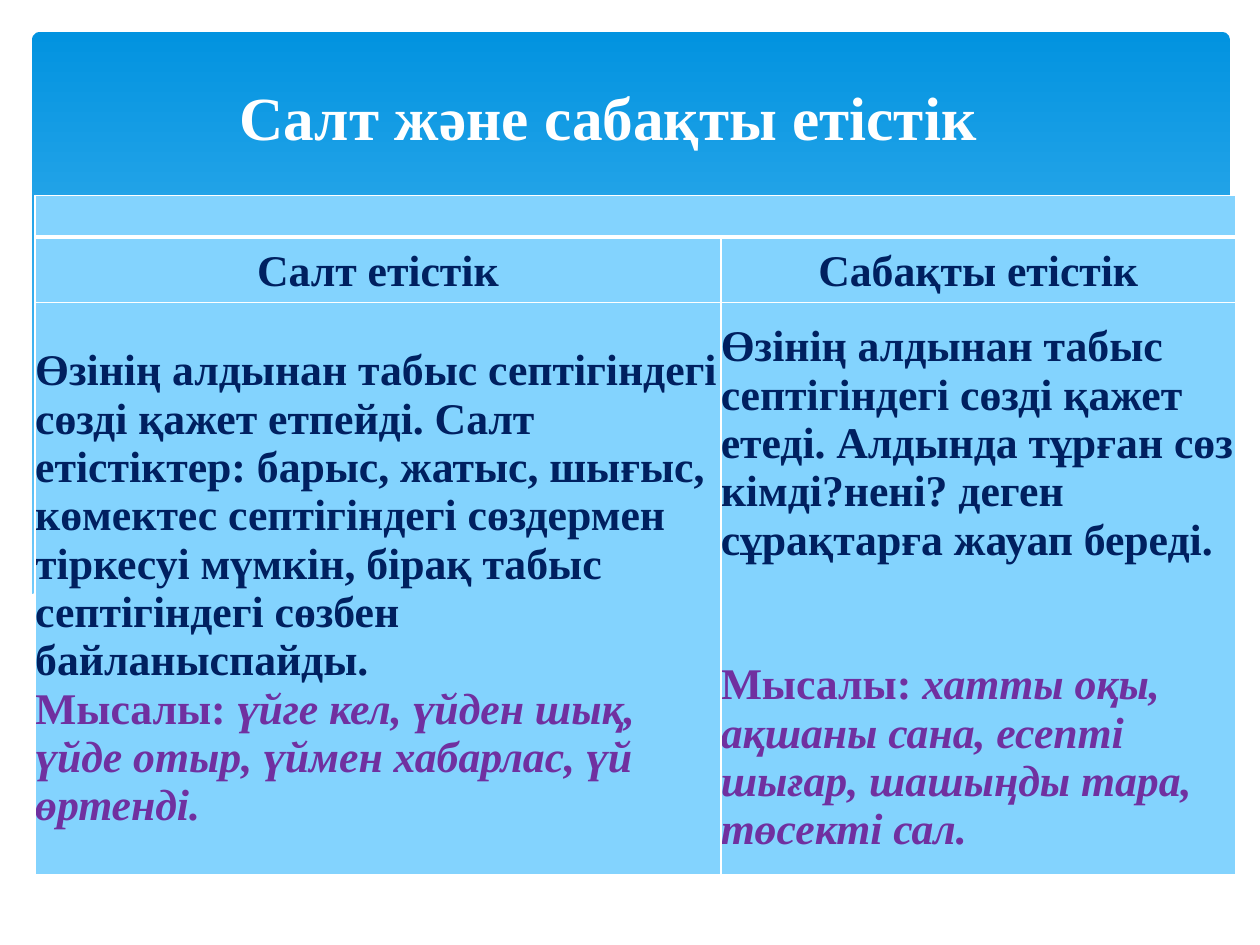
from dataclasses import dataclass

from lxml import etree
from pptx import Presentation
from pptx.dml.color import RGBColor
from pptx.enum.shapes import MSO_SHAPE
from pptx.enum.text import MSO_ANCHOR, PP_ALIGN
from pptx.oxml.ns import qn
from pptx.util import Cm, Pt

ROUNDED = MSO_SHAPE.ROUNDED_RECTANGLE
MIDDLE, BOTTOM = MSO_ANCHOR.MIDDLE, MSO_ANCHOR.BOTTOM
LEFT, CENTER = PP_ALIGN.LEFT, PP_ALIGN.CENTER


@dataclass(frozen=True)
class Theme:
    font: str = "Times New Roman"
    title_size: int = 35
    body_size: int = 25
    white: str = "FFFFFF"
    deep_blue: str = "0293E0"
    light_blue: str = "83D3FE"
    wave_blue: str = "C6E7FC"
    navy: str = "002060"
    purple: str = "7030A0"


THEME = Theme()

TITLE = "Салт және сабақты етістік "
HEADINGS = ("Салт етістік", "Сабақты етістік")
EXAMPLE_LABEL = "Мысалы: "
VERB_TYPES = (
    {
        "rule": "Өзінің алдынан табыс септігіндегі сөзді қажет етпейді. Салт етістіктер: "
                "барыс, жатыс, шығыс, көмектес септігіндегі сөздермен тіркесуі мүмкін, "
                "бірақ табыс септігіндегі сөзбен байланыспайды.",
        "example": "үйге кел, үйден шық, үйде отыр, үймен хабарлас, үй өртенді.",
        "gap": 0,
    },
    {
        "rule": "Өзінің алдынан табыс септігіндегі сөзді қажет етеді. Алдында тұрған сөз "
                "кімді?нені? деген сұрақтарға жауап береді.",
        "example": "хатты оқы, ақшаны сана, есепті шығар, шашыңды тара, төсекті сал.",
        "gap": 55,
    },
)
COLUMN_WIDTHS = (13.82, 10.38)
ROW_HEIGHTS = (0.84, 1.32, 11.53)

WAVES = (
    {"fill": THEME.wave_blue, "opacity": 29, "points": (
        (24.79, 11.68), (23.39, 11.94), (21.87, 12.27), (19.13, 12.9), (16.79, 13.34),
        (18.26, 13.54), (20.68, 13.67), (22.38, 13.54), (23.75, 13.26), (24.79, 12.88))},
    {"fill": THEME.wave_blue, "opacity": 40, "points": (
        (22.68, 13.54), (20.5, 13.21), (17.93, 12.7), (15.98, 12.24), (13.74, 11.76),
        (11.81, 11.46), (9.65, 11.33), (7.26, 11.48), (9.19, 11.76), (11.4, 12.24),
        (14.38, 12.93), (16.89, 13.36), (19, 13.61), (20.78, 13.69))},
    {"line": THEME.white, "points": (
        (7.85, 11.58), (8.97, 11.4), (11, 11.35), (12.95, 11.48), (15.44, 11.79),
        (17.65, 12.17), (20.19, 12.75), (23.04, 13.51))},
    {"line": THEME.white, "points": (
        (15.57, 13.13), (17.65, 12.6), (20.47, 11.94), (22.73, 11.53), (24.77, 11.33))},
    {"fill": THEME.white, "points": (
        (24.82, 12.85), (23.62, 13.26), (22.23, 13.54), (20.55, 13.64), (18.44, 13.51),
        (15.9, 13.18), (13.44, 12.67), (11.35, 12.19), (9.27, 11.73), (7.42, 11.46),
        (5.84, 11.3), (4.5, 11.28), (3.02, 11.38), (1.93, 11.56), (1.02, 11.81),
        (0.58, 12.01), (0.58, 14.96), (24.82, 14.96))},
)


def color(value):
    return RGBColor.from_string(value)


def add_run(paragraph, text, *, size=THEME.body_size, fill=THEME.navy, italic=False):
    run = paragraph.add_run()
    run.text = text
    run.font.name = THEME.font
    run.font.size = Pt(size)
    run.font.bold = True
    run.font.italic = italic
    run.font.color.rgb = color(fill)


def add_background(slide):
    panel = slide.shapes.add_shape(ROUNDED, Cm(0.64), Cm(0.64), Cm(24.16), Cm(13.16))
    panel.adjustments[0] = 0.013
    panel.shadow.inherit = False
    panel.line.fill.background()
    panel.fill.gradient()
    panel.fill.gradient_angle = 270
    stops = zip(panel.fill.gradient_stops, (THEME.deep_blue, THEME.light_blue), (0, 1))
    for stop, value, position in stops:
        stop.color.rgb = color(value)
        stop.position = position


def add_wave(slide, points, fill=None, line=None, opacity=100):
    start, *others = [(Cm(x), Cm(y)) for x, y in points]
    builder = slide.shapes.build_freeform(*start)
    builder.add_line_segments(others, close=fill is not None)
    shape = builder.convert_to_shape()
    shape.shadow.inherit = False
    if fill:
        shape.fill.solid()
        shape.fill.fore_color.rgb = color(fill)
        shape.line.fill.background()
        if opacity < 100:
            tint = next(shape._element.spPr.iter(qn("a:srgbClr")))
            etree.SubElement(tint, qn("a:alpha"), val=str(opacity * 1000))
    else:
        shape.fill.background()
        shape.line.color.rgb = color(line)
        shape.line.width = Pt(0)


def add_title(slide):
    box = slide.shapes.add_textbox(Cm(3.5), Cm(0.91), Cm(17.84), Cm(2.29))
    box.text_frame.word_wrap = True
    box.text_frame.vertical_anchor = BOTTOM
    paragraph = box.text_frame.paragraphs[0]
    paragraph.alignment = CENTER
    add_run(paragraph, TITLE, size=THEME.title_size, fill=THEME.white)


def style_cell(cell, top=1, bottom=1):
    cell.margin_left = cell.margin_right = cell.margin_top = cell.margin_bottom = 0
    cell.vertical_anchor = MIDDLE
    properties = cell._tc.get_or_add_tcPr()
    for side, width in (("L", 1), ("R", 1), ("T", top), ("B", bottom)):
        border = etree.SubElement(properties, qn(f"a:ln{side}"), w=str(Pt(width)))
        fill = etree.SubElement(border, qn("a:solidFill"))
        etree.SubElement(fill, qn("a:srgbClr"), val=THEME.white)
    cell.fill.solid()
    cell.fill.fore_color.rgb = color(THEME.light_blue)


def add_verb_table(slide):
    table = slide.shapes.add_table(
        len(ROW_HEIGHTS), len(COLUMN_WIDTHS), Cm(0.71), Cm(3.94),
        Cm(sum(COLUMN_WIDTHS)), Cm(sum(ROW_HEIGHTS))).table
    table.horz_banding = False
    for column, width in zip(table.columns, COLUMN_WIDTHS):
        column.width = Cm(width)
    for row, height in zip(table.rows, ROW_HEIGHTS):
        row.height = Cm(height)
    table.cell(0, 0).merge(table.cell(0, 1))
    for index, (heading, verb) in enumerate(zip(HEADINGS, VERB_TYPES)):
        band, header, body = (table.cell(row, index) for row in range(len(ROW_HEIGHTS)))
        style_cell(band, bottom=3)
        style_cell(header, top=3)
        style_cell(body)
        paragraph = header.text_frame.paragraphs[0]
        paragraph.alignment = CENTER
        paragraph.line_spacing = 1.07
        add_run(paragraph, heading)
        rule = body.text_frame.paragraphs[0]
        example = body.text_frame.add_paragraph()
        rule.alignment = example.alignment = LEFT
        add_run(rule, verb["rule"])
        example.space_before = Pt(verb["gap"])
        add_run(example, EXAMPLE_LABEL, fill=THEME.purple)
        add_run(example, verb["example"], fill=THEME.purple, italic=True)


def main():
    """Build the slide comparing intransitive and transitive verbs."""
    presentation = Presentation()
    presentation.slide_width, presentation.slide_height = Cm(25.4), Cm(19.05)
    slide = presentation.slides.add_slide(presentation.slide_layouts[6])
    add_background(slide)
    for wave in WAVES:
        add_wave(slide, **wave)
    add_title(slide)
    add_verb_table(slide)
    presentation.save("out.pptx")


if __name__ == "__main__":
    main()
